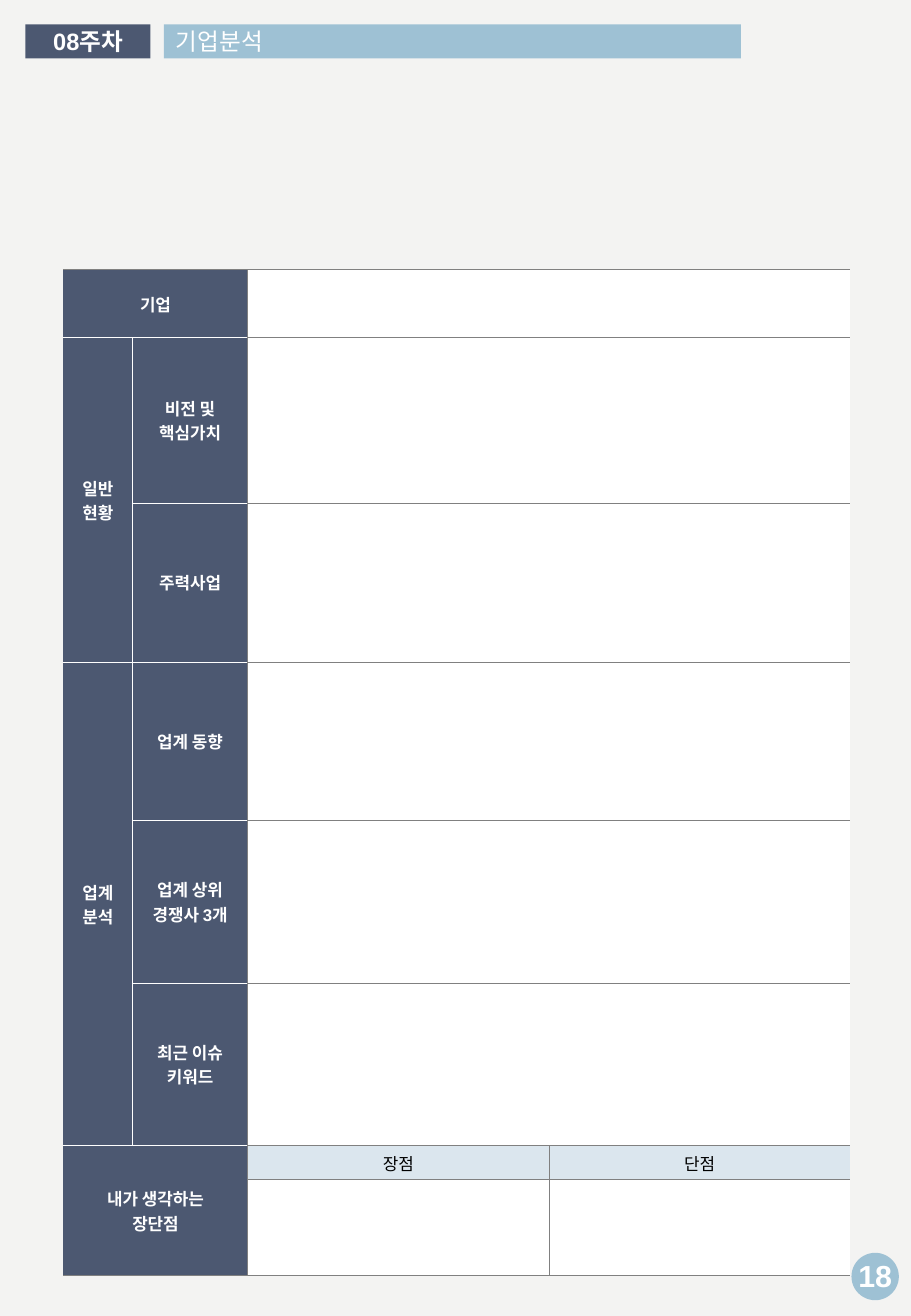
from lxml import etree
from pptx import Presentation
from pptx import util as u
from pptx.dml.color import RGBColor
from pptx.enum import shapes, text
from pptx.oxml.ns import qn

NAVY, SKY, PALE, GREY, WHITE, BLACK = "4C5871", "9EC1D4", "DBE6EE", "808080", "FFFFFF", "000000"
PAPER = "F3F3F2"

COLUMNS = [0.57, 0.95, 2.48, 2.48]
ROWS = [0.56, 1.36, 1.31, 1.3, 1.34, 1.34, 0.28, 0.79]
# row, column, row span, column span, lines
HEADINGS = [
    (0, 0, 1, 2, ["기업"]),
    (1, 0, 2, 1, ["일반", "현황"]),
    (1, 1, 1, 1, ["비전 및", "핵심가치"]),
    (2, 1, 1, 1, ["주력사업"]),
    (3, 0, 3, 1, ["업계", "분석"]),
    (3, 1, 1, 1, ["업계 동향"]),
    (4, 1, 1, 1, ["업계 상위", "경쟁사 3개"]),
    (5, 1, 1, 1, ["최근 이슈", "키워드"]),
    (6, 0, 2, 2, ["내가 생각하는", "장단점"]),
]
OPINIONS = ["장점", "단점"]
BARS = [
    (shapes.MSO_SHAPE.RECTANGLE, (1.35, 0.2, 4.75, 0.28), SKY),
    (shapes.MSO_SHAPE.RECTANGLE, (0.21, 0.2, 1.03, 0.28), NAVY),
    (shapes.MSO_SHAPE.OVAL, (7.01, 10.31, 0.39, 0.39), SKY),
]
CENTER, LEFT = text.PP_ALIGN.CENTER, text.PP_ALIGN.LEFT
# text, place, size, bold, alignment, wrap
LABELS = [
    ("기업분석", (1.35, 0.17, 5.13, 0.34), 14, False, LEFT, True),
    ("08주차", (0.27, 0.17, 0.91, 0.34), 14, True, CENTER, True),
    ("18", (6.96, 10.3, 0.49, 0.4), 18, True, CENTER, False),
]


def paint(target, color):
    target.solid()
    target.fore_color.rgb = RGBColor.from_string(color)


def inches(place):
    return [u.Inches(value) for value in place]


def write(frame, lines, align, color, **font):
    for index, line in enumerate(lines):
        para = frame.paragraphs[0] if index == 0 else frame.add_paragraph()
        para.alignment = align
        span = para.add_run()
        span.text = line
        paint(span.font.fill, color)
        for name, value in {"name": "Arial", **font}.items():
            setattr(span.font, name, value)


def set_borders(cell, borders):
    """Draw the given sides; a side with no colour gets no line."""
    props = cell._tc.get_or_add_tcPr()
    for index, side in enumerate("LRTB"):
        color = borders.get(side)
        line = etree.Element(qn(f"a:ln{side}"), w=str(u.Pt(0.5)))
        fill = etree.SubElement(line, qn("a:solidFill" if color else "a:noFill"))
        if color:
            etree.SubElement(fill, qn("a:srgbClr"), val=color)
        props.insert(index, line)


def add_block(table, row, column, height, width, fill, borders):
    """Merge, fill and border an area, and return its first cell."""
    first = table.cell(row, column)
    if height * width > 1:
        first.merge(table.cell(row + height - 1, column + width - 1))
    for r in range(row, row + height):
        for c in range(column, column + width):
            cell = table.cell(r, c)
            paint(cell.fill, fill)
            set_borders(cell, borders)
    first.vertical_anchor = text.MSO_ANCHOR.MIDDLE
    first.margin_top = first.margin_bottom = u.Inches(0.03)
    return first


def add_analysis_table(page):
    place = (0.52, 2.22, sum(COLUMNS), sum(ROWS))
    table = page.shapes.add_table(len(ROWS), len(COLUMNS), *inches(place)).table
    table.first_row = table.horz_banding = False
    for column, width in zip(table.columns, COLUMNS):
        column.width = u.Inches(width)
    for row, height in zip(table.rows, ROWS):
        row.height = u.Inches(height)

    for row, column, height, width, lines in HEADINGS:
        borders = {
            "L": WHITE if column else None,
            "R": GREY if column + width == 2 else WHITE,
            "T": WHITE if row else GREY,
            "B": GREY if row + height == len(ROWS) else WHITE,
        }
        cell = add_block(table, row, column, height, width, NAVY, borders)
        write(cell.text_frame, lines, CENTER, WHITE, size=u.Pt(10), bold=True)

    rules = {"L": GREY, "T": GREY, "B": GREY}
    for row in range(6):
        add_block(table, row, 2, 1, 2, WHITE, rules)
    for column, opinion in enumerate(OPINIONS, 2):
        borders = {**rules, "R": GREY if column == 2 else None}
        cell = add_block(table, 6, column, 1, 1, PALE, borders)
        write(cell.text_frame, [opinion], CENTER, BLACK, size=u.Pt(10), bold=False)
        add_block(table, 7, column, 1, 1, WHITE, borders)


def main():
    deck = Presentation()
    deck.slide_width, deck.slide_height = inches((7.5, 10.83))
    page = deck.slides.add_slide(deck.slide_layouts[6])
    paint(page.background.fill, PAPER)

    add_analysis_table(page)
    for kind, place, color in BARS:
        bar = page.shapes.add_shape(kind, *inches(place))
        bar.shadow.inherit = False
        paint(bar.fill, color)
        bar.line.fill.background()
    for label, place, size, bold, align, wrap in LABELS:
        frame = page.shapes.add_textbox(*inches(place)).text_frame
        frame.word_wrap = wrap
        frame.auto_size = text.MSO_AUTO_SIZE.SHAPE_TO_FIT_TEXT
        write(frame, [label], align, WHITE, size=u.Pt(size), bold=bold)
    deck.save("out.pptx")


if __name__ == "__main__":
    main()
